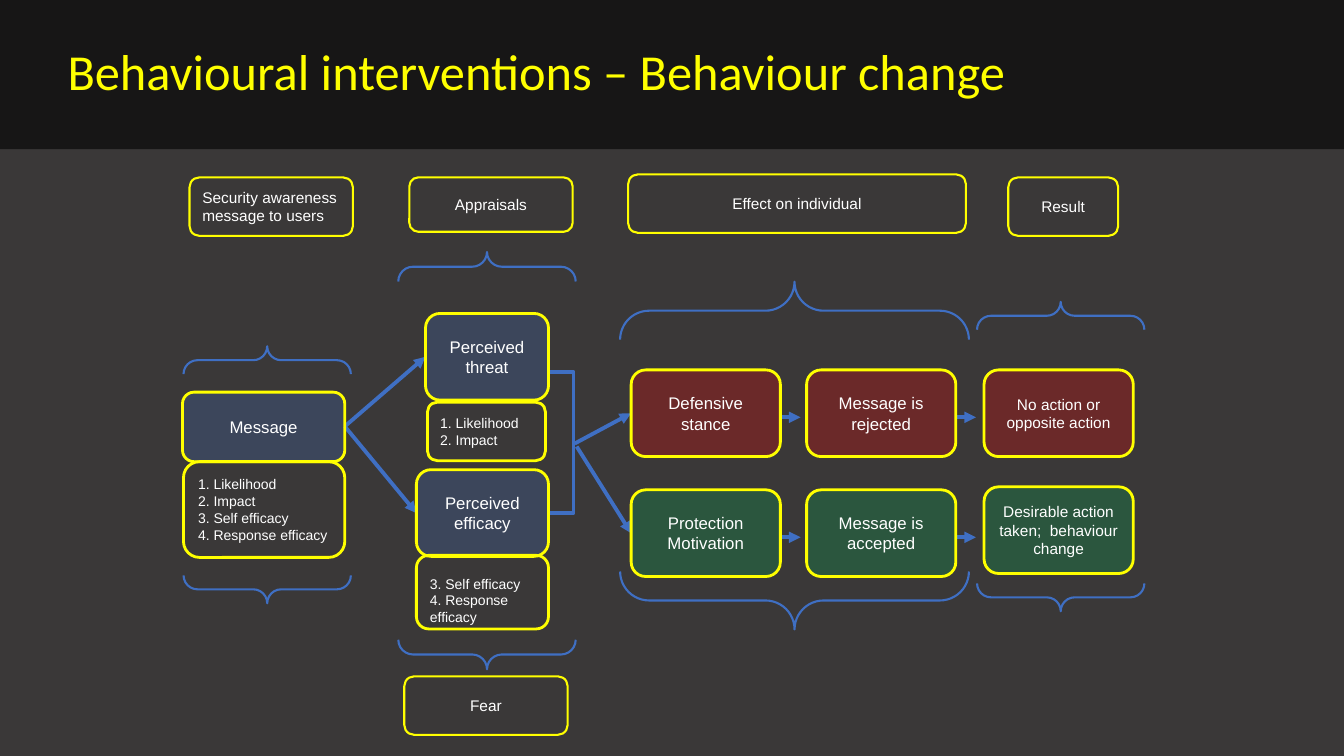
from dataclasses import dataclass

from lxml.etree import SubElement
from pptx import Presentation
from pptx.dml.color import RGBColor
from pptx.enum.shapes import MSO_CONNECTOR, MSO_SHAPE
from pptx.enum.text import MSO_ANCHOR, PP_ALIGN
from pptx.oxml.ns import qn
from pptx.util import Inches, Pt


@dataclass(frozen=True)
class Theme:
    background: str = "3A3838"
    band: str = "171616"
    accent: str = "FFFF00"
    text: str = "FFFFFF"
    arrow: str = "3F6FC3"
    blue: str = "4472C4"
    red: str = "FF0000"
    green: str = "00B050"
    tint: int = 25
    title_font: str = "Calibri"
    body_font: str = "Arial"
    title_size: int = 36
    stage_size: int = 12
    label_size: int = 11
    list_size: int = 10


THEME = Theme()
WIDTH, HEIGHT = 13.33, 7.5
TITLE = "Behavioural interventions – Behaviour change"

# Outlined labels: text, left, top, width, height, alignment
LABELS = [
    ("Security awareness message to users", 1.88, 1.76, 1.62, 0.58, PP_ALIGN.LEFT),
    ("Appraisals", 4.06, 1.76, 1.62, 0.54, PP_ALIGN.CENTER),
    ("Effect on individual", 6.23, 1.73, 3.35, 0.58, PP_ALIGN.CENTER),
    ("Result", 10, 1.76, 1.09, 0.58, PP_ALIGN.CENTER),
    ("Fear", 4.01, 6.71, 1.62, 0.58, PP_ALIGN.CENTER),
]
# Blue stages: text, left, top, width, height
STAGES = [
    ("Message", 1.81, 3.89, 1.61, 0.69),
    ("Perceived efficacy", 4.13, 4.66, 1.31, 0.86),
    ("Perceived threat", 4.22, 3.11, 1.22, 0.86),
]
# Factor lists: lines, left, top, width, height, top inset
FACTORS = [
    (["1. Likelihood", "2. Impact", "3. Self efficacy", "4. Response efficacy"],
     1.82, 4.58, 1.6, 0.95, 0.05),
    (["3. Self efficacy", "4. Response efficacy"], 4.13, 5.51, 1.31, 0.73, 0.21),
    (["1. Likelihood", "2. Impact"], 4.24, 3.99, 1.17, 0.58, 0.05),
]
# Outcome grid: one row per path, one column per step
OUTCOME_LEFTS = [6.26, 8, 9.76]
OUTCOME_WIDTH, OUTCOME_HEIGHT = 1.48, 0.86
OUTCOMES = [
    (THEME.red, [3.67, 3.67, 3.67], 4.14,
     ["Defensive stance", "Message is rejected", "No action or opposite action"]),
    (THEME.green, [4.86, 4.86, 4.83], 5.33,
     ["Protection Motivation", "Message is accepted",
      "Desirable action taken;  behaviour change"]),
]
STEP_ARROW = 0.2
# Brace pairs as seen: centre x, centre y, breadth, total height
BRACES = [
    (2.65, 4.71, 1.66, 2.55),
    (4.83, 4.57, 1.76, 4.14),
    (7.88, 4.52, 3.46, 3.45),
    (10.52, 4.53, 1.66, 3.07),
]
# Arrows: start, end
ARROWS = [
    ((3.42, 4.23), (4.13, 5.09)),
    ((3.42, 4.23), (4.22, 3.54)),
    ((5.7, 4.4), (6.26, 4.1)),
    ((5.72, 4.43), (6.26, 5.29)),
]
JOIN = (5.69, 4.38)
JOIN_STARTS = [(5.44, 5.09), (5.44, 3.69)]


def color(value):
    return RGBColor.from_string(value)


def write(para, text, size, font=THEME.body_font, ink=THEME.text):
    span = para.add_run()
    span.text = text
    span.font.size = Pt(size)
    span.font.name = font
    span.font.color.rgb = color(ink)


def add_outline(page, kind, bounds, line, weight):
    shape = page.shapes.add_shape(kind, *map(Inches, bounds))
    shape.shadow.inherit = False
    shape.fill.background()
    shape.line.color.rgb = color(line)
    shape.line.width = Pt(weight)
    return shape


def add_box(page, lines, bounds, size, align=PP_ALIGN.CENTER, weight=2,
            fill=None, inset=0.05):
    box = add_outline(page, MSO_SHAPE.FLOWCHART_ALTERNATE_PROCESS, bounds,
                      THEME.accent, weight)
    if fill:
        box.fill.solid()
        box.fill.fore_color.rgb = color(fill)
        tone = box._element.spPr.find(qn("a:solidFill"))[0]
        SubElement(tone, qn("a:alpha")).set("val", str(THEME.tint * 1000))
    frame = box.text_frame
    frame.word_wrap = True
    frame.vertical_anchor = MSO_ANCHOR.MIDDLE
    frame.margin_top = Inches(inset)
    for index, text in enumerate(lines):
        para = frame.add_paragraph() if index else frame.paragraphs[0]
        para.alignment = align
        write(para, text, size)


def add_link(page, start, end, weight=2.75, bent=False):
    """Draw a straight arrow, or a plain right-angled line when bent."""
    kind = MSO_CONNECTOR.ELBOW if bent else MSO_CONNECTOR.STRAIGHT
    link = page.shapes.add_connector(kind, *map(Inches, start + end))
    link.line.color.rgb = color(THEME.arrow)
    link.line.width = Pt(weight)
    properties = link._element.spPr
    if bent:
        properties.find(qn("a:prstGeom")).set("prst", "bentConnector2")
    else:
        SubElement(properties.find(qn("a:ln")), qn("a:tailEnd")).set("type", "triangle")
    SubElement(properties, qn("a:effectLst"))


def add_brace(page, center_x, center_y, breadth, height):
    bounds = (center_x - height / 2, center_y - breadth / 2, height, breadth)
    brace = add_outline(page, MSO_SHAPE.DOUBLE_BRACE, bounds, THEME.arrow, 1.5)
    brace.rotation = 90


def add_heading(page):
    band = page.shapes.add_shape(MSO_SHAPE.RECTANGLE, 0, 0, Inches(WIDTH), Inches(1.48))
    band.shadow.inherit = False
    band.fill.solid()
    band.fill.fore_color.rgb = color(THEME.band)
    band.line.fill.background()
    title = page.shapes.title
    title._element.addprevious(band._element)
    title.left, title.top, title.width, title.height = map(Inches, (0.67, 0.24, 12, 1))
    frame = title.text_frame
    frame.margin_left = frame.margin_right = frame.margin_top = frame.margin_bottom = 0
    frame.vertical_anchor = MSO_ANCHOR.MIDDLE
    para = frame.paragraphs[0]
    para.alignment = PP_ALIGN.LEFT
    para.line_spacing = 0.9
    write(para, TITLE, THEME.title_size, THEME.title_font, THEME.accent)


def main():
    deck = Presentation()
    deck.slide_width, deck.slide_height = Inches(WIDTH), Inches(HEIGHT)
    page = deck.slides.add_slide(deck.slide_layouts[5])
    page.background.fill.solid()
    page.background.fill.fore_color.rgb = color(THEME.background)
    add_heading(page)

    for start in JOIN_STARTS:
        add_link(page, start, JOIN, weight=2.5, bent=True)
    for start, end in ARROWS:
        add_link(page, start, end)
    for brace in BRACES:
        add_brace(page, *brace)
    for text, *bounds in STAGES:
        add_box(page, [text], bounds, THEME.stage_size, fill=THEME.blue)
    for lines, *bounds, inset in FACTORS:
        add_box(page, lines, bounds, THEME.list_size, PP_ALIGN.LEFT, inset=inset)
    for fill, tops, arrow_y, texts in OUTCOMES:
        for left in OUTCOME_LEFTS[:-1]:
            edge = left + OUTCOME_WIDTH
            add_link(page, (edge, arrow_y), (edge + STEP_ARROW, arrow_y))
        sizes = [THEME.stage_size, THEME.stage_size, THEME.label_size]
        for text, left, top, size in zip(texts, OUTCOME_LEFTS, tops, sizes):
            add_box(page, [text], (left, top, OUTCOME_WIDTH, OUTCOME_HEIGHT), size, fill=fill)
    for text, *bounds, align in LABELS:
        add_box(page, [text], bounds, THEME.label_size, align, weight=1.5)

    deck.save("out.pptx")


if __name__ == "__main__":
    main()
